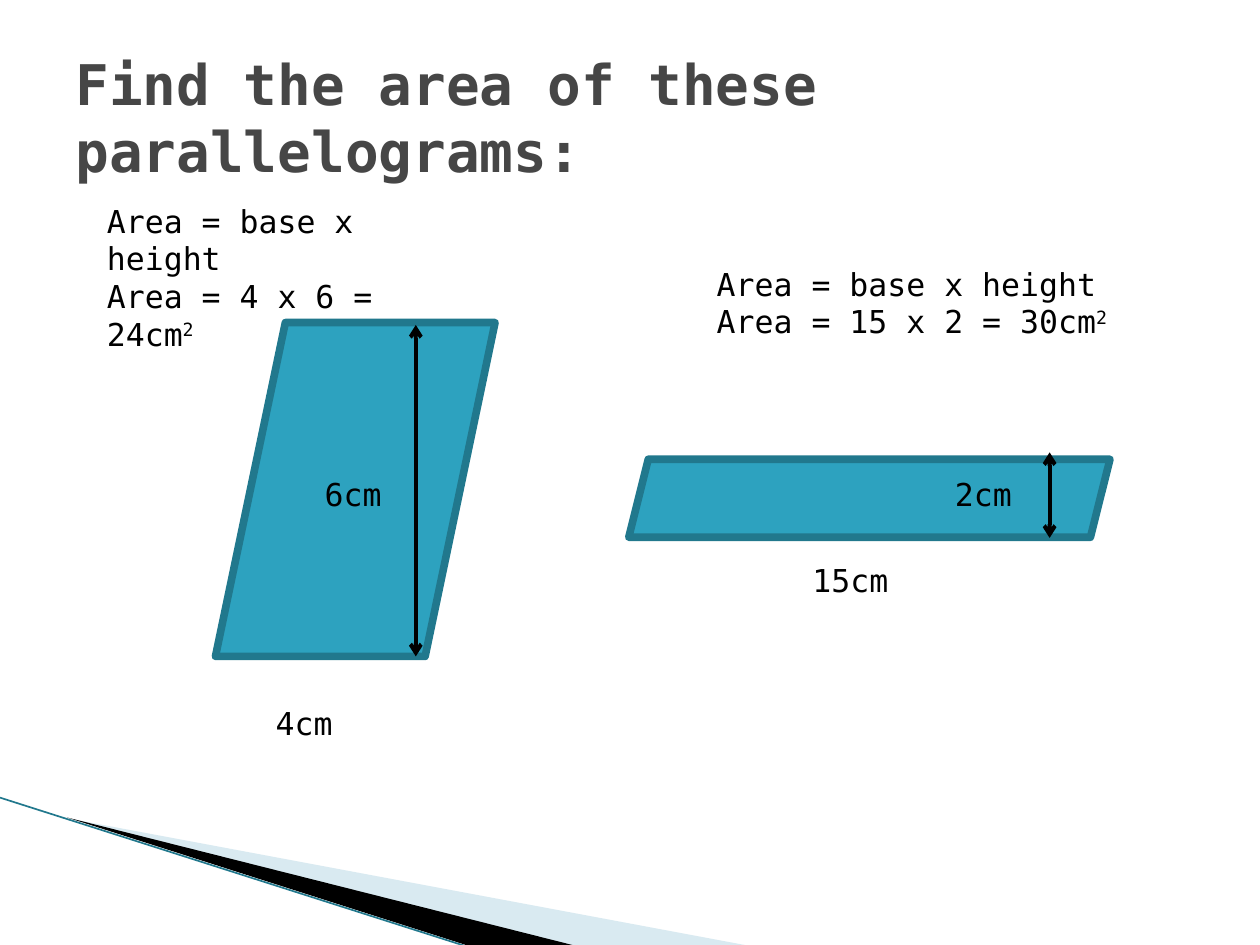
from lxml import etree
from pptx import Presentation
from pptx.dml.color import RGBColor
from pptx.enum.shapes import MSO_CONNECTOR as CONN, MSO_SHAPE as SHAPE
from pptx.enum.text import MSO_ANCHOR as ANCHOR
from pptx.oxml.ns import qn
from pptx.util import Pt

FONT = "DejaVu Sans Mono"
COLORS = {"title": "464646", "text": "000000", "fill": "2DA2BF",
          "edge": "21788D", "pale": "A0CBDC", "dark": "000000"}


def rgb(name):
    return RGBColor.from_string(COLORS[name])


def add_text(slide, box, lines, size=18, color="text", bold=False, anchor=ANCHOR.TOP):
    """Each line is a (text, superscript) pair."""
    tf = slide.shapes.add_textbox(*map(Pt, box)).text_frame
    tf.word_wrap = True
    tf.vertical_anchor = anchor
    for i, (text, power) in enumerate(lines):
        p = tf.add_paragraph() if i else tf.paragraphs[0]
        p.text = text
        if power:
            r = p.add_run()
            r.text = power
            r._r.get_or_add_rPr().set("baseline", "30000")
        for r in p.runs:
            r.font.name, r.font.size, r.font.bold = FONT, Pt(size), bold
            r.font.color.rgb = rgb(color)


def add_line(slide, start, end, color, width, arrows=False):
    line = slide.shapes.add_connector(CONN.STRAIGHT, *map(Pt, (*start, *end)))
    line.line.color.rgb = rgb(color)
    line.line.width = Pt(width)
    if arrows:
        ln = line.line._get_or_add_ln()
        for tag in ("a:headEnd", "a:tailEnd"):
            etree.SubElement(ln, qn(tag), type="arrow")
    etree.SubElement(line._element.spPr, qn("a:effectLst"))


def add_wedge(slide, points, color, alpha=None):
    points = [(Pt(x), Pt(y)) for x, y in points]
    builder = slide.shapes.build_freeform(*points[0], scale=1.0)
    builder.add_line_segments(points[1:], close=True)
    sp = builder.convert_to_shape()
    sp.shadow.inherit = False
    sp.line.fill.background()
    sp.fill.solid()
    sp.fill.fore_color.rgb = rgb(color)
    if alpha:
        clr = sp._element.spPr.find(".//" + qn("a:srgbClr"))
        etree.SubElement(clr, qn("a:alpha"), val=str(alpha * 1000))


def add_corner(slide, left, top):
    """Pale and black wedges with a thin edge, running off the bottom."""
    def at(*points):
        return [(left + x, top + y) for x, y in points]

    add_wedge(slide, at((39.6, 12), (428.4, 84.7), (328.3, 84.7)), "pale", 40)
    add_wedge(slide, at((38.2, 11.3), (329, 84.7), (267.8, 84.7)), "dark")
    add_line(slide, *at((0, 0), (267.8, 85.4)), "edge", 0.95)


def add_parallelogram(slide, box, height_line, labels):
    """The height line is (x, top, bottom) and labels are (x, y, text), all from the box corner."""
    left, top, _, _ = box
    sp = slide.shapes.add_shape(SHAPE.PARALLELOGRAM, *map(Pt, box))
    sp.shadow.inherit = False
    sp.fill.solid()
    sp.fill.fore_color.rgb = rgb("fill")
    sp.line.color.rgb = rgb("edge")
    sp.line.width = Pt(4.33)
    etree.SubElement(sp.line._get_or_add_ln(), qn("a:round"))
    x, y1, y2 = height_line
    add_line(slide, (left + x, top + y1), (left + x, top + y2), "text", 2.25, arrows=True)
    for x, y, text in labels:
        add_text(slide, (left + x, top + y, 79.2, 28.8), [(text, "")])


def add_working(slide, box, product):
    add_text(slide, box, [("Area = base x height", ""), (f"Area = {product}cm", "2")])


def main():
    prs = Presentation()
    prs.slide_width, prs.slide_height = Pt(720), Pt(540)
    slide = prs.slides.add_slide(prs.slide_layouts[6])
    add_corner(slide, 0, 455.8)
    add_text(slide, (36, 21.6, 648, 90), [("Find the area of these parallelograms:", "")],
             32, "title", True, ANCHOR.MIDDLE)
    add_parallelogram(slide, (123.1, 184.3, 159.8, 190.8), (114.5, 1.4, 190.8),
                      [(27.4, 214.6, "4cm"), (55.4, 83.5, "6cm")])
    add_parallelogram(slide, (359.3, 262.4, 275, 44.6), (240.5, -3.9, 45),
                      [(97.9, 54.4, "15cm"), (179.3, 5.4, "2cm")])
    add_working(slide, (54, 111.6, 215.3, 72.7), "4 x 6 = 24")
    add_working(slide, (402.5, 147.6, 268.6, 72.7), "15 x 2 = 30")
    prs.save("out.pptx")


if __name__ == "__main__":
    main()
